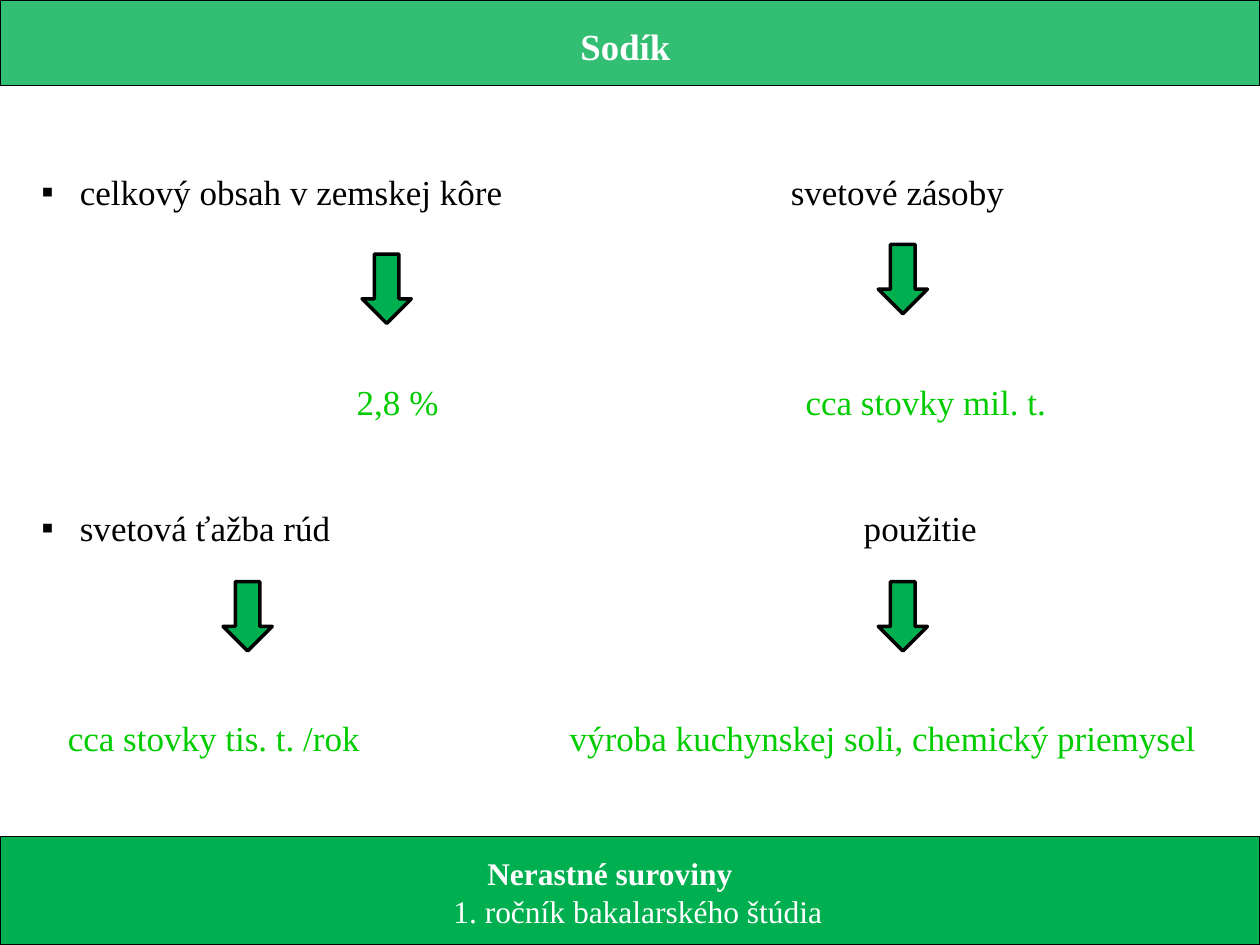
from lxml import etree
from pptx import Presentation
from pptx.dml.color import RGBColor
from pptx.enum.shapes import MSO_SHAPE
from pptx.enum.text import MSO_ANCHOR, PP_ALIGN
from pptx.oxml.ns import qn
from pptx.util import Pt

RECT, DOWN_ARROW = MSO_SHAPE.RECTANGLE, MSO_SHAPE.DOWN_ARROW
TOP = MSO_ANCHOR.TOP
LEFT, CENTER = PP_ALIGN.LEFT, PP_ALIGN.CENTER
GREEN = RGBColor(0x00, 0xB0, 0x50)
LIME = RGBColor(0x00, 0xCC, 0x00)
BLACK = RGBColor(0, 0, 0)
WHITE = RGBColor(255, 255, 255)
WIDTH, HEIGHT = 720, 540


def set_all(target, values):
    for name, value in values.items():
        setattr(target, name, value)


class Deck:
    font = "Times New Roman"

    def __init__(self):
        self.prs = Presentation()
        set_all(self.prs, {"slide_width": Pt(WIDTH), "slide_height": Pt(HEIGHT)})
        self.s = self.prs.slides.add_slide(self.prs.slide_layouts[6])

    def shape(self, kind, box, line_width, opacity=100):
        sp = self.s.shapes.add_shape(kind, *map(Pt, box))
        sp.shadow.inherit = False
        sp.fill.solid()
        sp.fill.fore_color.rgb = GREEN
        if opacity < 100:
            color = sp.fill._xPr.find(qn("a:solidFill"))[0]
            etree.SubElement(color, qn("a:alpha"), val=str(opacity * 1000))
        sp.line.color.rgb = BLACK
        sp.line.width = Pt(line_width)
        return sp

    def frame(self, sp, top):
        tf = sp.text_frame
        set_all(tf, {"word_wrap": True, "vertical_anchor": TOP,
                     "margin_top": Pt(top), "margin_bottom": 0,
                     "margin_left": Pt(7.2), "margin_right": Pt(7.2)})
        return tf

    def paragraph(self, tf, text, size, color, align, pitch,
                  bold=False, before=0, margins=(0, 0), bullet=None):
        p = tf.paragraphs[0] if not tf.text else tf.add_paragraph()
        set_all(p, {"alignment": align, "line_spacing": Pt(pitch),
                    "space_before": Pt(before)})
        r = p.add_run()
        r.text = text
        set_all(r.font, {"name": self.font, "size": Pt(size), "bold": bold})
        r.font.color.rgb = color
        ppr = p._p.get_or_add_pPr()
        hanging = -margins[0] if bullet else 0
        for name, value in zip(("marL", "marR", "indent"), (*margins, hanging)):
            ppr.set(name, str(Pt(value)))
        if bullet:
            etree.SubElement(ppr, qn("a:buFont"), typeface=self.font)
            etree.SubElement(ppr, qn("a:buChar"), char=bullet)
        else:
            etree.SubElement(ppr, qn("a:buNone"))

    def column(self, left, width, entries):
        box = (left, 67.68, width, 372.96)
        tf = self.frame(self.s.shapes.add_textbox(*map(Pt, box)), 29.6)
        rows = ((BLACK, 0), (LIME, 96), (BLACK, 48), (LIME, 96))
        for (text, margin, bullet), (color, before) in zip(entries, rows):
            self.paragraph(tf, text, 20, color, LEFT, 24, before=before,
                           margins=(margin, 0), bullet=bullet)

    def arrow(self, x, y):
        self.shape(DOWN_ARROW, (x, y, 28.08, 39.6), 2)


def main():
    deck = Deck()

    tf = deck.frame(deck.shape(RECT, (0, 0, WIDTH, 48.96), 0.75, 80), 14.5)
    deck.paragraph(tf, "Sodík", 21, WHITE, CENTER, 24, bold=True, margins=(0, 5.2))

    tf = deck.frame(deck.shape(RECT, (0, 478.08, WIDTH, 61.92), 0.75), 9.8)
    for text, bold, margins in (
        ("Nerastné suroviny", True, (0, 22.9)),
        ("1. ročník bakalarského štúdia", False, (9.1, 0)),
    ):
        deck.paragraph(tf, text, 18, WHITE, CENTER, 21.7, bold=bold, margins=margins)

    deck.column(16.56, 290, (
        ("celkový obsah v zemskej kôre", 22, "▪"),
        ("2,8 %", 180.2, None),
        ("svetová ťažba rúd", 22, "▪"),
        ("cca stovky tis. t. /rok", 15.1, None),
    ))
    deck.column(318.5, 380, (
        ("svetové zásoby", 126.3, None),
        ("cca stovky mil. t.", 134.8, None),
        ("použitie", 168, None),
        ("výroba kuchynskej soli, chemický priemysel", 0, None),
    ))

    for x, y in ((206.9, 145.2), (501.84, 139.68), (127.44, 332.4), (501.84, 332.4)):
        deck.arrow(x, y)

    deck.prs.save("out.pptx")


if __name__ == "__main__":
    main()
